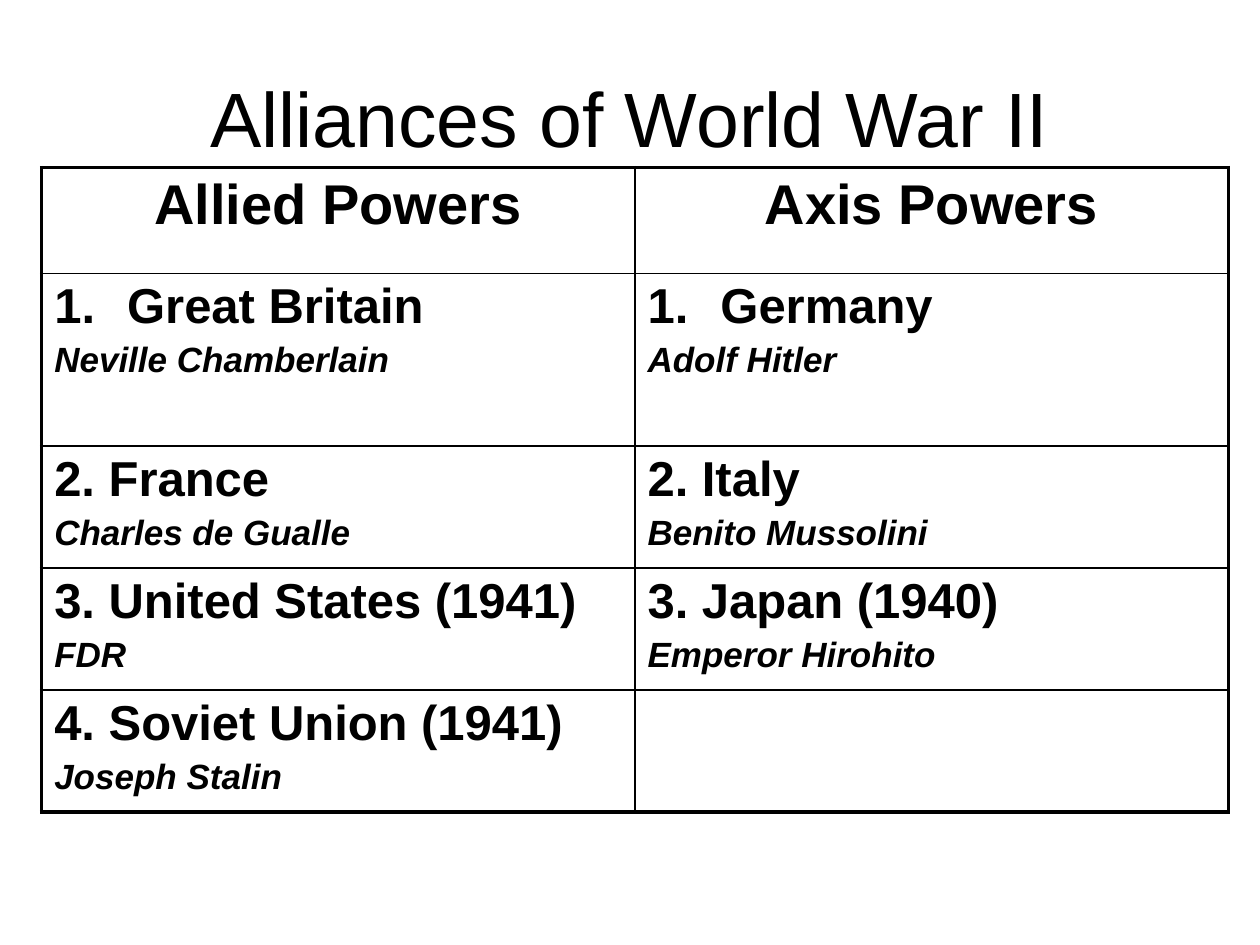
import pptx
import pptx.dml.color
import pptx.enum.text
import pptx.oxml
import pptx.oxml.ns
import pptx.util
from pptx.util import Cm

BLACK = "000000"
THIN, THICK = 1, 2.25
HANG = Cm(1.47)
ALIGN = pptx.enum.text.PP_ALIGN

HEADINGS = ("Allied Powers", "Axis Powers")
# Each row: (country, leader) for the Allied side, then for the Axis side
POWERS = [
    (("Great Britain", "Neville Chamberlain"), ("Germany", "Adolf Hitler")),
    (("2. France", "Charles de Gualle"), ("2. Italy", "Benito Mussolini")),
    (("3. United States (1941)", "FDR"), ("3. Japan (1940)", "Emperor Hirohito")),
    (("4. Soviet Union (1941)", "Joseph Stalin"), None),
]
COL_WIDTH = Cm(11.96)
ROW_HEIGHTS = [Cm(h) for h in (2.13, 3.48, 2.46, 2.46, 2.46)]

TITLE = {"size": pptx.util.Pt(44), "bold": False}
HEADING = {"size": pptx.util.Pt(32), "bold": True}
COUNTRY = {"size": pptx.util.Pt(28), "bold": True}
LEADER = {"size": pptx.util.Pt(20), "bold": True, "italic": True}


def color(hex_string):
    return pptx.dml.color.RGBColor.from_string(hex_string)


def write(p, text, style, align=ALIGN.LEFT):
    p.alignment = align
    r = p.add_run()
    r.text = text
    for name, value in {"name": "Arial", **style}.items():
        setattr(r.font, name, value)
    r.font.color.rgb = color(BLACK)


def hang(p, numbered):
    pPr = p._p.get_or_add_pPr()
    pPr.set("marL", str(HANG))
    pPr.set("indent", str(-HANG))
    if numbered:
        bullet = pptx.oxml.parse_xml(
            f'<a:buAutoNum {pptx.oxml.ns.nsdecls("a")} type="arabicPeriod"/>')
        pPr.append(bullet)


def set_borders(cell, widths):
    tcPr = cell._tc.get_or_add_tcPr()
    for side, width in widths.items():
        tcPr.append(pptx.oxml.parse_xml(
            f'<a:ln{side} {pptx.oxml.ns.nsdecls("a")} w="{pptx.util.Pt(width)}">'
            f'<a:solidFill><a:srgbClr val="{BLACK}"/></a:solidFill></a:ln{side}>'))


def add_title(s, text):
    tf = s.shapes.add_textbox(Cm(1.27), Cm(0.76), Cm(22.86), Cm(3.18)).text_frame
    tf.word_wrap = True
    tf.vertical_anchor = pptx.enum.text.MSO_ANCHOR.MIDDLE
    write(tf.paragraphs[0], text, TITLE, ALIGN.CENTER)


def fill_power(cell, power, numbered):
    tf = cell.text_frame
    country, leader = tf.paragraphs[0], tf.add_paragraph()
    write(country, power[0], COUNTRY)
    write(leader, power[1], LEADER)
    leader.space_before = pptx.util.Pt(4)
    if numbered:
        hang(country, True)
        hang(leader, False)


def add_alliances(s):
    n_rows, n_cols = len(ROW_HEIGHTS), len(HEADINGS)
    table = s.shapes.add_table(n_rows, n_cols, Cm(0.84), Cm(3.38),
                               COL_WIDTH * n_cols, sum(ROW_HEIGHTS)).table
    table.first_row = table.horz_banding = False
    for col in table.columns:
        col.width = COL_WIDTH
    for row, height in zip(table.rows, ROW_HEIGHTS):
        row.height = height

    # Thick outer frame, thin inner rules
    for i in range(n_rows):
        for j in range(n_cols):
            cell = table.cell(i, j)
            outer = {"L": j == 0, "R": j == n_cols - 1,
                     "T": i == 0, "B": i == n_rows - 1}
            set_borders(cell, {k: THICK if v else THIN for k, v in outer.items()})
            cell.fill.background()

    # Headings, then the powers; the first power is numbered automatically
    for j, heading in enumerate(HEADINGS):
        p = table.cell(0, j).text_frame.paragraphs[0]
        write(p, heading, HEADING, ALIGN.CENTER)
    for i, powers in enumerate(POWERS, start=1):
        for j, power in enumerate(powers):
            if power:
                fill_power(table.cell(i, j), power, numbered=i == 1)


def main():
    prs = pptx.Presentation()
    prs.slide_width, prs.slide_height = Cm(25.4), Cm(19.05)
    s = prs.slides.add_slide(prs.slide_layouts[6])
    add_title(s, "Alliances of World War II")
    add_alliances(s)
    prs.save("out.pptx")


if __name__ == "__main__":
    main()
